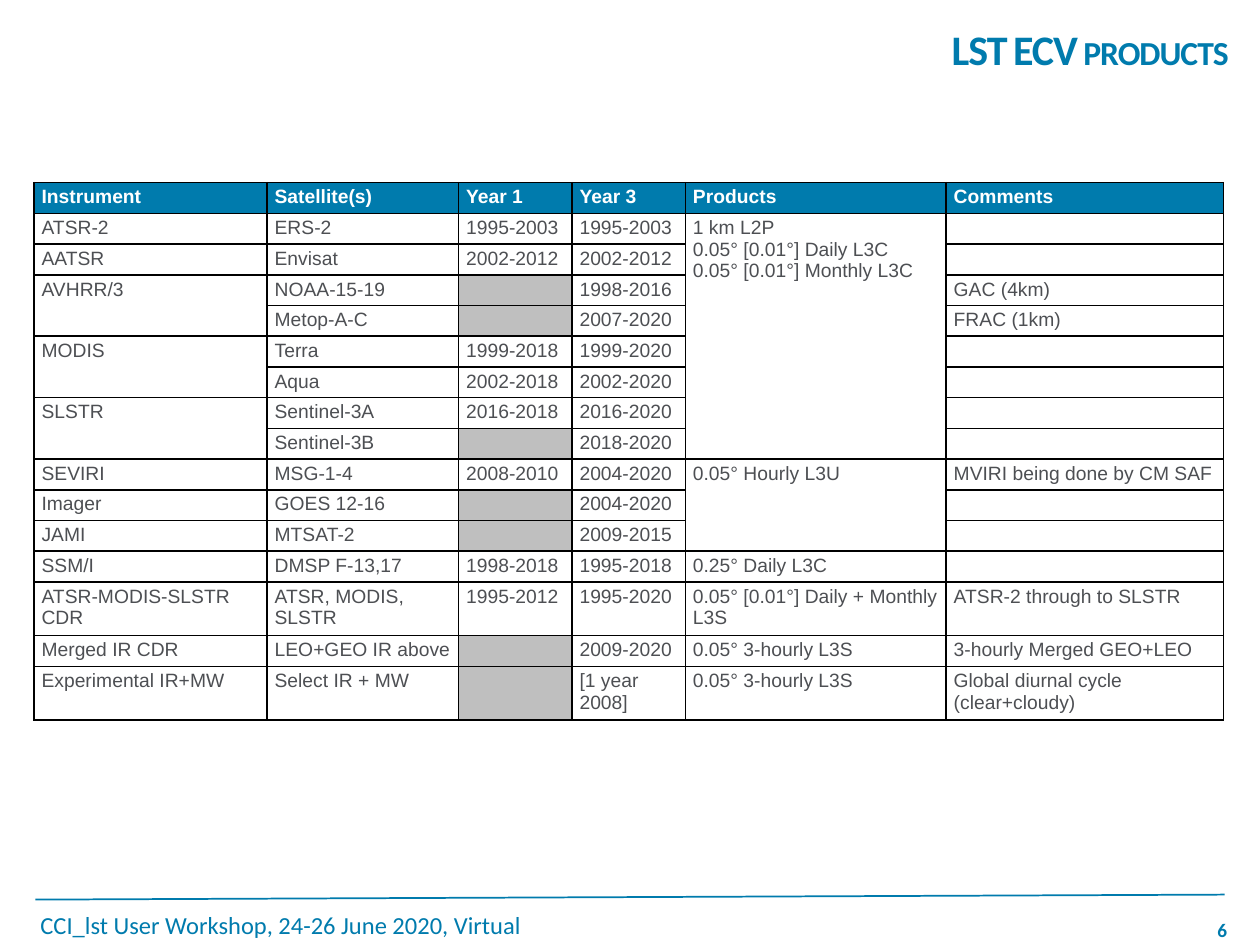
from dataclasses import dataclass
from typing import Optional

from lxml import etree
from pptx import Presentation
from pptx import util as u
from pptx.dml.color import RGBColor
from pptx.enum import shapes, text
from pptx.oxml.ns import qn

BLUE = RGBColor(0x00, 0x7B, 0xAD)
GREY_TEXT = RGBColor(0x4D, 0x4F, 0x53)
GREY_FILL = RGBColor(0xBF, 0xBF, 0xBF)
WHITE = RGBColor(0xFF, 0xFF, 0xFF)
TITLE_ONLY_LAYOUT = 5
TABLE_FONT_SIZE = 11
ROW_HEIGHT = 0.23
COLUMN_WIDTHS = (1.85, 1.52, 0.9, 0.9, 2.07, 2.2)
HEADINGS = ("Instrument", "Satellite(s)", "Year 1", "Year 3", "Products", "Comments")
LEVEL_PRODUCTS = "1 km L2P\n0.05° [0.01°] Daily L3C\n0.05° [0.01°] Monthly L3C"


@dataclass(frozen=True)
class Product:
    """One table row; a year1 of None is a greyed-out cell."""
    instrument: str
    satellite: str
    year1: Optional[str]
    year3: str
    products: str = ""
    comments: str = ""

    def values(self) -> tuple:
        return (self.instrument, self.satellite, self.year1,
                self.year3, self.products, self.comments)


@dataclass(frozen=True)
class Span:
    column: int
    first_row: int
    last_row: int


@dataclass(frozen=True)
class Label:
    left: float
    top: float
    width: float
    height: float
    words: str
    size: int
    bold: bool
    inset: float
    wrap: bool
    alignment: text.PP_ALIGN


PRODUCTS = (
    Product("ATSR-2", "ERS-2", "1995-2003", "1995-2003", LEVEL_PRODUCTS),
    Product("AATSR", "Envisat", "2002-2012", "2002-2012"),
    Product("AVHRR/3", "NOAA-15-19", None, "1998-2016", "", "GAC (4km)"),
    Product("", "Metop-A-C", None, "2007-2020", "", "FRAC (1km)"),
    Product("MODIS", "Terra", "1999-2018", "1999-2020"),
    Product("", "Aqua", "2002-2018", "2002-2020"),
    Product("SLSTR", "Sentinel-3A", "2016-2018", "2016-2020"),
    Product("", "Sentinel-3B", None, "2018-2020"),
    Product("SEVIRI", "MSG-1-4", "2008-2010", "2004-2020", "0.05° Hourly L3U",
            "MVIRI being done by CM SAF"),
    Product("Imager", "GOES 12-16", None, "2004-2020"),
    Product("JAMI", "MTSAT-2", None, "2009-2015"),
    Product("SSM/I", "DMSP F-13,17", "1998-2018", "1995-2018", "0.25° Daily L3C"),
    Product("ATSR-MODIS-SLSTR CDR", "ATSR, MODIS, SLSTR", "1995-2012", "1995-2020",
            "0.05° [0.01°] Daily + Monthly L3S", "ATSR-2 through to SLSTR"),
    Product("Merged IR CDR", "LEO+GEO IR above", None, "2009-2020",
            "0.05° 3-hourly L3S", "3-hourly Merged GEO+LEO"),
    Product("Experimental IR+MW", "Select IR + MW", None, "[1 year 2008]",
            "0.05° 3-hourly L3S", "Global diurnal cycle (clear+cloudy)"),
)
SPANS = (Span(0, 3, 4), Span(0, 5, 6), Span(0, 7, 8), Span(4, 1, 8), Span(4, 9, 11))
LABELS = (
    Label(9.57, 7.29, 0.26, 0.19, "6", 11, True, 0, False, text.PP_ALIGN.CENTER),
    Label(0.28, 7.18, 4.88, 0.29, "CCI_lst User Workshop, 24-26 June 2020, Virtual",
          14, False, 0.04, True, text.PP_ALIGN.LEFT),
)


def add_run(paragraph, words: str, font_name: str, size: int, color: RGBColor, bold: bool):
    run = paragraph.add_run()
    run.text = words
    run.font.name = font_name
    run.font.size = u.Pt(size)
    run.font.color.rgb = color
    run.font.bold = bold
    return run


def add_title(slide) -> None:
    title = slide.shapes.title
    title.left, title.top = u.Inches(4.21), u.Inches(0.05)
    title.width, title.height = u.Inches(5.51), u.Inches(0.67)
    title.text_frame.vertical_anchor = text.MSO_ANCHOR.MIDDLE
    paragraph = title.text_frame.paragraphs[0]
    paragraph.alignment = text.PP_ALIGN.RIGHT
    run = add_run(paragraph, "LST ECV products", "Calibri", 24, BLUE, True)
    properties = run.font._element
    properties.set("cap", "small")
    properties.set("spc", "-60")


def add_label(slide, label: Label) -> None:
    box = slide.shapes.add_textbox(u.Inches(label.left), u.Inches(label.top),
                                   u.Inches(label.width), u.Inches(label.height))
    frame = box.text_frame
    frame.word_wrap = label.wrap
    frame.margin_left = frame.margin_right = u.Inches(label.inset)
    frame.margin_top = frame.margin_bottom = u.Inches(label.inset)
    paragraph = frame.paragraphs[0]
    paragraph.alignment = label.alignment
    add_run(paragraph, label.words, "Calibri", label.size, BLUE, label.bold)


def add_footer_line(slide) -> None:
    line = slide.shapes.add_connector(shapes.MSO_CONNECTOR.STRAIGHT, u.Inches(0.28),
                                      u.Inches(7.14), u.Inches(9.72), u.Inches(7.1))
    line.line.color.rgb = BLUE
    line.line.width = u.Pt(1)
    etree.SubElement(line._element.spPr, qn("a:effectLst"))


def add_borders(cell) -> None:
    properties = cell._tc.get_or_add_tcPr()
    for side in ("lnL", "lnR", "lnT", "lnB"):
        border = etree.SubElement(properties, qn(f"a:{side}"), w=str(u.Pt(1)))
        fill = etree.SubElement(border, qn("a:solidFill"))
        etree.SubElement(fill, qn("a:srgbClr"), val="000000")


def fill_cell(cell, value: Optional[str], is_heading: bool) -> None:
    cell.margin_left = cell.margin_right = u.Inches(0.06)
    cell.margin_top = cell.margin_bottom = u.Inches(0.03)
    add_borders(cell)
    if is_heading or value is None:
        cell.fill.solid()
        cell.fill.fore_color.rgb = BLUE if is_heading else GREY_FILL
    else:
        cell.fill.background()
    frame = cell.text_frame
    if not value:
        # An empty cell needs the small size too, or its row grows
        etree.SubElement(frame.paragraphs[0]._p, qn("a:endParaRPr"),
                         sz=str(TABLE_FONT_SIZE * 100))
        return
    for index, line in enumerate(value.split("\n")):
        paragraph = frame.add_paragraph() if index else frame.paragraphs[0]
        add_run(paragraph, line, "Arial", TABLE_FONT_SIZE,
                WHITE if is_heading else GREY_TEXT, is_heading)


def add_product_table(slide) -> None:
    rows = [HEADINGS] + [product.values() for product in PRODUCTS]
    table = slide.shapes.add_table(
        len(rows), len(HEADINGS), u.Inches(0.27), u.Inches(1.45),
        u.Inches(sum(COLUMN_WIDTHS)), u.Inches(ROW_HEIGHT * len(rows))).table
    table.first_row = table.horz_banding = False
    for column, width in zip(table.columns, COLUMN_WIDTHS):
        column.width = u.Inches(width)
    for row_index, values in enumerate(rows):
        table.rows[row_index].height = u.Inches(ROW_HEIGHT)
        for column_index, value in enumerate(values):
            fill_cell(table.cell(row_index, column_index), value, row_index == 0)
    for span in SPANS:
        table.cell(span.first_row, span.column).merge(
            table.cell(span.last_row, span.column))


def main() -> None:
    presentation = Presentation()
    presentation.slide_width, presentation.slide_height = u.Inches(10), u.Inches(7.5)
    slide = presentation.slides.add_slide(presentation.slide_layouts[TITLE_ONLY_LAYOUT])

    # Footer
    add_footer_line(slide)
    for label in LABELS:
        add_label(slide, label)

    # Title and table
    add_title(slide)
    add_product_table(slide)
    presentation.save("out.pptx")


if __name__ == "__main__":
    main()
